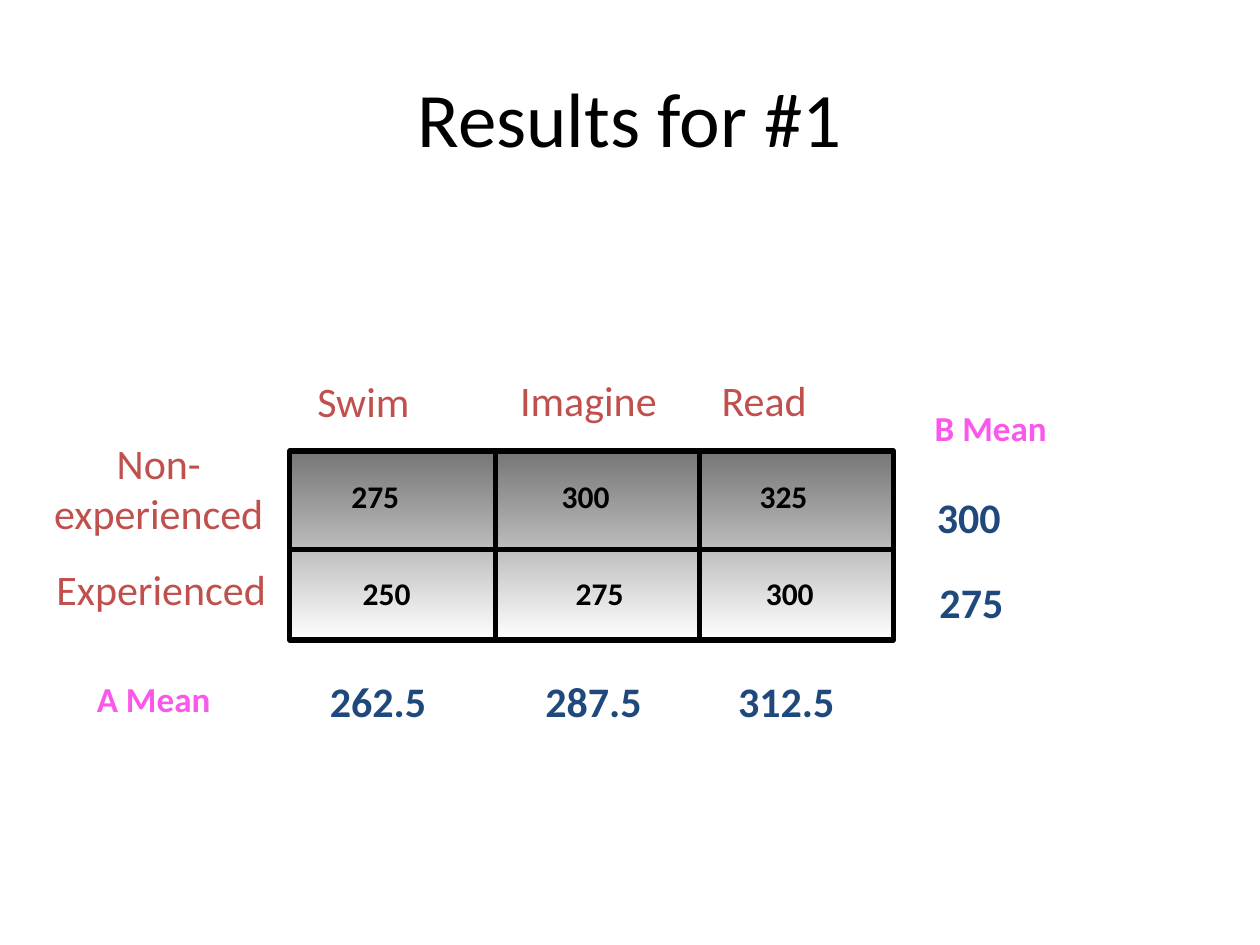
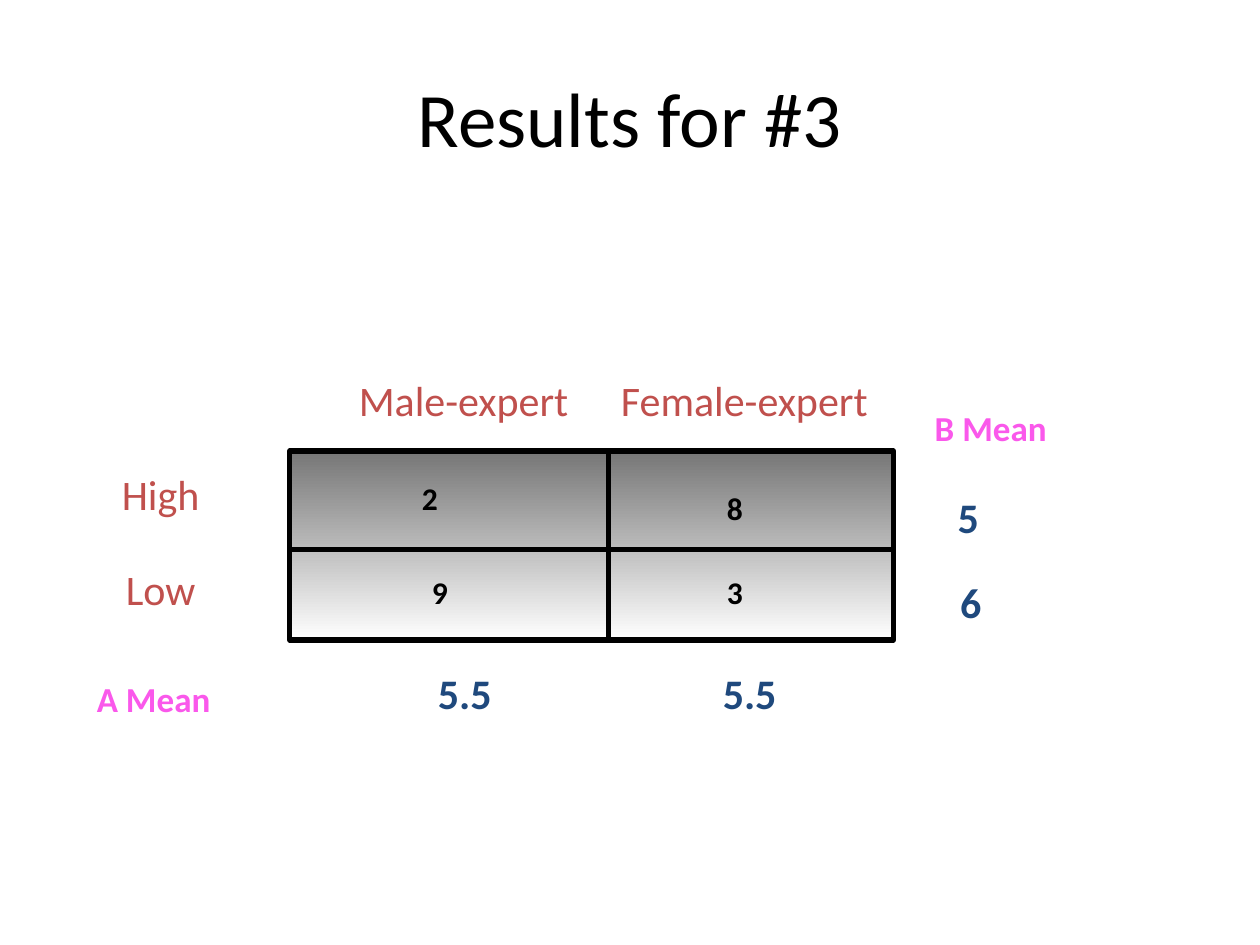
import pptx
import pptx.util
import pptx.dml.color
import pptx.enum.shapes
import pptx.enum.text
import pptx.oxml

Inches = pptx.util.Inches
Align = pptx.enum.text.PP_ALIGN
Anchor = pptx.enum.text.MSO_ANCHOR
Fit = pptx.enum.text.MSO_AUTO_SIZE

# Grid frame: left, top, right, bottom and the line between its rows
LEFT, TOP, RIGHT, BASE, MID = 2.3, 3.58, 7.09, 5.08, 4.36


def paint(color, code):
    color.rgb = pptx.dml.color.RGBColor.from_string(code)


class Deck:
    # Each style: colour, box height, alignment and font values
    STYLES = {
        "title": ("000000", 1.25, Align.CENTER, {"size": 44, "bold": False}),
        "label": ("C0504D", 0.5, Align.LEFT, {"size": 24, "bold": False}),
        "side": ("C0504D", 0.5, Align.CENTER, {"size": 24, "bold": False}),
        "mean": ("1F497D", 0.5, Align.CENTER, {"size": 24, "bold": True}),
        "head": ("FA58EB", 0.43, Align.LEFT, {"size": 20, "bold": True}),
        "cell": ("000000", 0.4, Align.LEFT, {"size": 18, "bold": True}),
    }

    def __init__(self):
        self.show = pptx.Presentation()
        self.show.slide_width = Inches(10)
        self.show.slide_height = Inches(7.5)

    def text(self, style, words, left, top, width, wrap=False):
        code, high, align, font = self.STYLES[style]
        lines = words.split("\n")
        high += 0.4 * (len(lines) - 1)
        box = self.slide.shapes.add_textbox(
            Inches(left), Inches(top), Inches(width), Inches(high))
        frame = box.text_frame
        frame.word_wrap = wrap
        frame.auto_size = Fit.SHAPE_TO_FIT_TEXT
        for num, line in enumerate(lines):
            para = frame.add_paragraph() if num else frame.paragraphs[0]
            para.alignment = align
            run = para.add_run()
            run.text = line
            look = {**font, "name": "Calibri", "size": pptx.util.Pt(font["size"])}
            for key, value in look.items():
                setattr(run.font, key, value)
            paint(run.font.color, code)
        return frame

    def row(self, style, top, width, items):
        for left, words in items:
            self.text(style, words, left, top, width)

    def edge(self, line):
        paint(line.color, "000000")
        line.width = pptx.util.Pt(3)

    def rule(self, x1, y1, x2, y2):
        link = self.slide.shapes.add_connector(
            pptx.enum.shapes.MSO_CONNECTOR.STRAIGHT,
            Inches(x1), Inches(y1), Inches(x2), Inches(y2))
        self.edge(link.line)
        link._element.spPr.append(pptx.oxml.parse_xml(
            '<a:effectLst xmlns:a='
            '"http://schemas.openxmlformats.org/drawingml/2006/main"/>'))

    def grid(self, splits):
        box = self.slide.shapes.add_shape(
            pptx.enum.shapes.MSO_SHAPE.RECTANGLE, Inches(LEFT), Inches(TOP),
            Inches(RIGHT - LEFT), Inches(BASE - TOP))
        box.shadow.inherit = False
        box.fill.gradient()
        box.fill.gradient_angle = 270
        for stop, place, code in zip(
                box.fill.gradient_stops, (0, 1), ("767676", "FFFFFF")):
            stop.position = place
            paint(stop.color, code)
        self.edge(box.line)
        self.rule(LEFT, MID, RIGHT, MID)
        for x in splits:
            self.rule(x, TOP, x, BASE)

    def page(self, title, splits):
        # Title, grid and mean headings shared by the slides
        self.slide = self.show.slides.add_slide(self.show.slide_layouts[6])
        frame = self.text("title", title, 0.5, 0.3, 9, wrap=True)
        frame.auto_size = Fit.NONE
        frame.vertical_anchor = Anchor.MIDDLE
        self.grid(splits)
        self.text("head", "A Mean", 0.67, 5.33, 1.19)
        self.text("head", "B Mean", 7.32, 3.18, 1.19)


def main():
    deck = Deck()

    # Three activities by experience
    deck.page("Results for #1", (3.93, 5.55))
    deck.text("label", "Swim", 2.42, 2.93, 1.02)
    deck.text("label", "Imagine", 4.03, 2.92, 1.39)
    deck.text("label", "Read", 5.63, 2.92, 1)
    deck.text("side", "Non-\nexperienced", 0.25, 3.42, 2.02)
    deck.text("side", "Experienced", 0.25, 4.42, 2.06)
    deck.row("cell", 3.74, 0.62, [(2.69, "275"), (4.36, "300"), (5.93, "325")])
    deck.row("cell", 4.51, 0.62, [(2.78, "250"), (4.47, "275"), (5.98, "300")])
    deck.row("mean", 5.31, 1.04,
             [(2.48, "262.5"), (4.19, "287.5"), (5.72, "312.5")])
    deck.text("mean", "300", 7.31, 3.85, 0.76)
    deck.text("mean", "275", 7.33, 4.53, 0.76)

    # Two kinds of expert by level
    deck.page("Results for #3", (4.83,))
    deck.text("label", "Male-expert", 2.75, 2.92, 1.96)
    deck.text("label", "Female-expert", 4.83, 2.92, 2.35)
    deck.text("side", "High", 0.83, 3.67, 0.89)
    deck.text("side", "Low", 0.87, 4.42, 0.81)
    deck.text("cell", "2", 3.25, 3.75, 0.34)
    deck.text("cell", "8", 5.67, 3.83, 0.34)
    deck.text("cell", "9", 3.33, 4.5, 0.34)
    deck.text("cell", "3", 5.67, 4.5, 0.48, wrap=True)
    deck.row("mean", 5.25, 0.66, [(3.36, "5.5"), (5.62, "5.5")])
    deck.text("mean", "5", 7.49, 3.85, 0.39)
    deck.text("mean", "6", 7.51, 4.53, 0.39)

    deck.show.save("out.pptx")


if __name__ == "__main__":
    main()
